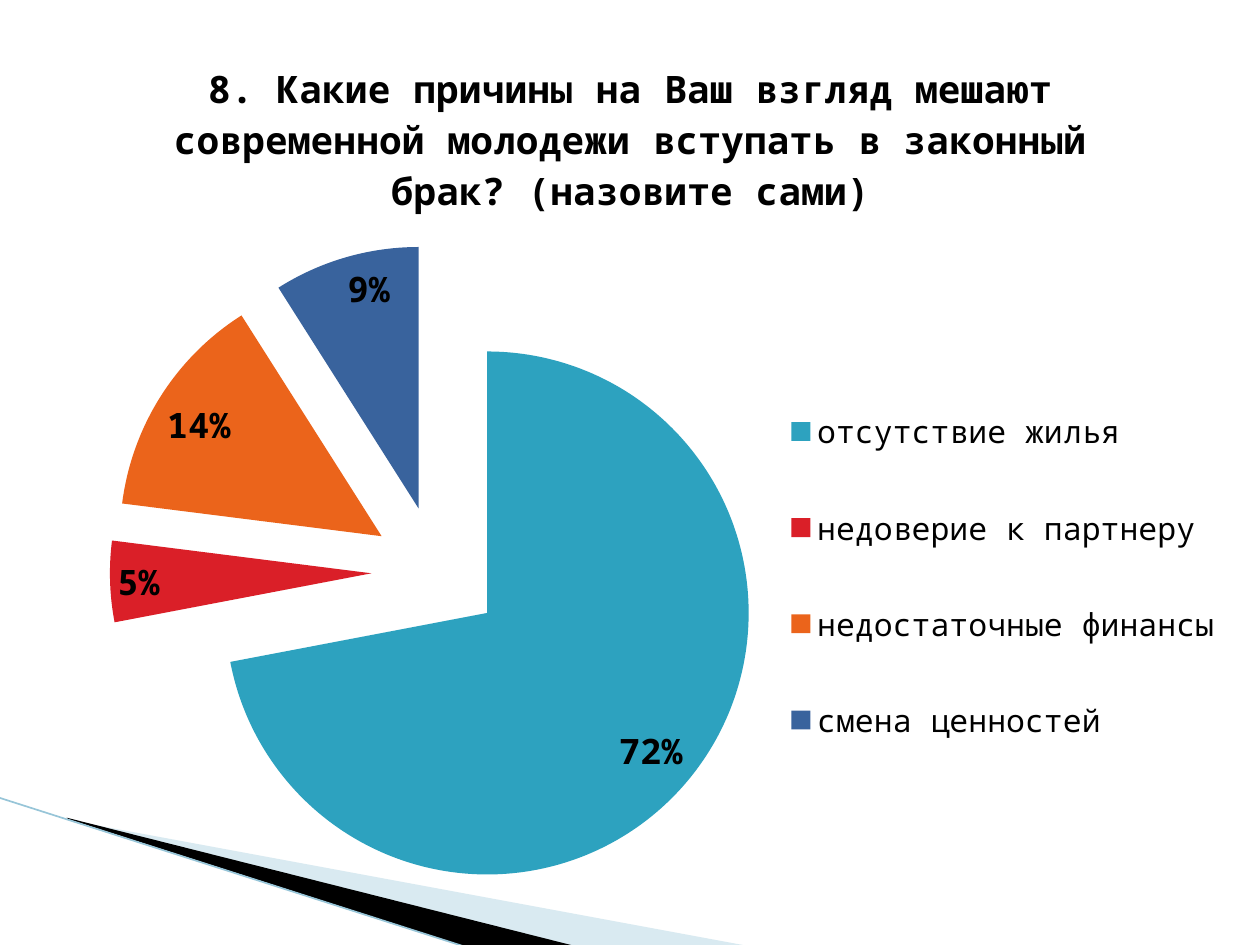
from lxml.etree import SubElement
from pptx import Presentation
from pptx.chart.data import CategoryChartData
from pptx.dml.color import RGBColor
from pptx.enum.chart import XL_CHART_TYPE as ChartType
from pptx.enum.chart import XL_LABEL_POSITION as LabelPosition
from pptx.enum.chart import XL_LEGEND_POSITION as LegendPosition
from pptx.enum.shapes import MSO_CONNECTOR as Connector
from pptx.oxml import parse_xml
from pptx.oxml.ns import nsdecls, qn
from pptx.util import Pt

PX = 9144  # 100 px to the inch
FONT = "Noto Sans Mono"
BLACK = RGBColor(0x00, 0x00, 0x00)
PALE_BLUE = RGBColor(0xA0, 0xCB, 0xDC)
EDGE_BLUE = RGBColor(0x97, 0xC5, 0xD8)
TEAL = RGBColor(0x2D, 0xA2, 0xBF)
RED = RGBColor(0xDA, 0x1F, 0x28)
ORANGE = RGBColor(0xEB, 0x64, 0x1B)
BLUE = RGBColor(0x39, 0x63, 0x9D)

QUESTION = ("8. Какие причины на Ваш взгляд мешают современной молодежи "
            "вступать в законный брак? (назовите сами)")
REASONS = [
    ("отсутствие жилья", 0.72, TEAL),
    ("недоверие к партнеру", 0.05, RED),
    ("недостаточные финансы", 0.14, ORANGE),
    ("смена ценностей", 0.09, BLUE),
]


def style_font(font, size, bold=False, color=BLACK):
    font.name = FONT
    font.size = Pt(size)
    font.bold = bold
    font.color.rgb = color


def write(frame, text, **style):
    frame.text = text
    style_font(frame.paragraphs[0].runs[0].font, **style)


def manual_layout(x, y, w, h, inner=False):
    """Return a c:layout element whose lengths are fractions of the chart."""
    target = '<c:layoutTarget val="inner"/>' if inner else ""
    return parse_xml(
        f'<c:layout {nsdecls("c")}><c:manualLayout>{target}'
        '<c:xMode val="edge"/><c:yMode val="edge"/>'
        f'<c:x val="{x}"/><c:y val="{y}"/><c:w val="{w}"/><c:h val="{h}"/>'
        '</c:manualLayout></c:layout>')


def add_wedge(slide, left, top, points, color, alpha=None):
    builder = slide.shapes.build_freeform(*points[0], scale=PX)
    builder.add_line_segments(points[1:], close=True)
    wedge = builder.convert_to_shape(left * PX, top * PX)
    wedge.shadow.inherit = False
    wedge.fill.solid()
    wedge.fill.fore_color.rgb = color
    wedge.line.fill.background()
    if alpha is not None:
        fill_color = wedge.fill._xPr.find(qn("a:solidFill"))[0]
        SubElement(fill_color, qn("a:alpha"), val=str(alpha * 1000))


def add_corner_decoration(slide, left, top):
    add_wedge(slide, left, top,
              [(56, 18), (596, 118), (457, 118), (56, 17)], PALE_BLUE, alpha=40)
    add_wedge(slide, left, top,
              [(54, 16), (458, 118), (373, 119), (55, 17)], BLACK)
    edge = slide.shapes.add_connector(
        Connector.STRAIGHT, left * PX, top * PX,
        (left + 372) * PX, (top + 119) * PX)
    edge.line.color.rgb = EDGE_BLUE
    edge.line.width = Pt(0.95)
    SubElement(edge._element.spPr, qn("a:effectLst"))


def add_reasons_pie(slide, left, top, width, height):
    data = CategoryChartData(number_format="0%")
    data.categories = [reason for reason, _, _ in REASONS]
    data.add_series(QUESTION, [share for _, share, _ in REASONS])
    chart = slide.shapes.add_chart(
        ChartType.PIE, left * PX, top * PX, width * PX, height * PX, data).chart
    style_font(chart.font, 18)
    chart.has_title = True
    write(chart.chart_title.text_frame, QUESTION, size=21.6, bold=True)
    chart.chart_title.include_in_layout = False

    pie = chart.plots[0]
    pie.vary_by_categories = True
    shares = pie.series[0]
    for index, (_, _, color) in enumerate(REASONS):
        fill = shares.points[index].format.fill
        fill.solid()
        fill.fore_color.rgb = color
    explosion = parse_xml(f'<c:explosion {nsdecls("c")} val="25"/>')
    shares._element.find(qn("c:dPt")).addprevious(explosion)

    labels = shares.data_labels
    labels.show_value = True
    labels.show_percentage = False
    labels.number_format = "0%"
    labels.number_format_is_linked = False
    labels.position = LabelPosition.INSIDE_END
    style_font(labels.font, 20, bold=True)

    chart.has_legend = True
    legend = chart.legend
    legend.position = LegendPosition.RIGHT
    legend.include_in_layout = False
    style_font(legend.font, 18)

    place_part(legend._element, manual_layout(0.64, 0.37, 0.35, 0.49))
    place_part(chart._chartSpace.chart.plotArea,
               manual_layout(0.07, 0.24, 0.54, 0.74, inner=True))


def place_part(part, layout):
    """Give a chart part its layout, in the order the schema asks for."""
    for old in part.findall(qn("c:layout")):
        part.remove(old)
    position = part.find(qn("c:legendPos"))
    if position is None:
        part.insert(0, layout)
    else:
        position.addnext(layout)


def main():
    deck = Presentation()
    deck.slide_width, deck.slide_height = 1000 * PX, 750 * PX
    slide = deck.slides.add_slide(deck.slide_layouts[6])
    add_corner_decoration(slide, -1, 633)
    add_reasons_pie(slide, 20, 21, 961, 709)
    deck.save("out.pptx")


if __name__ == "__main__":
    main()
